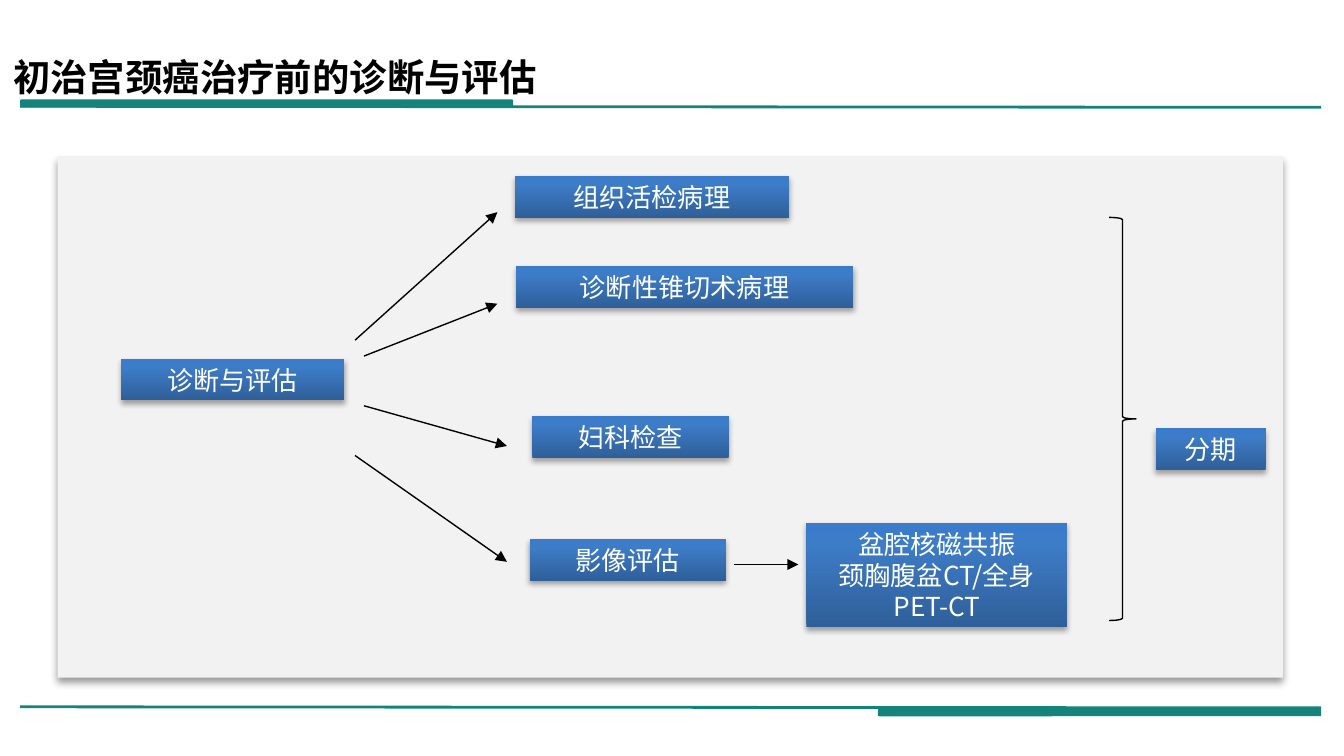
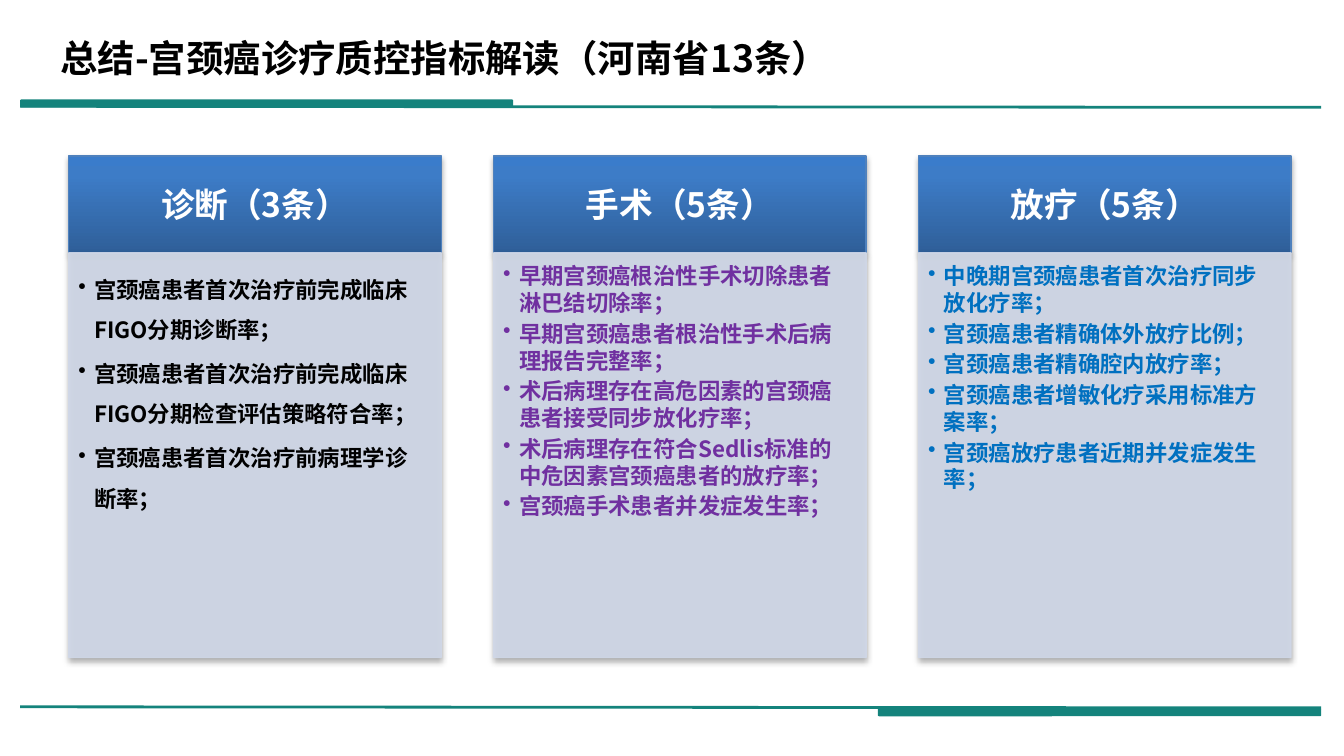
"""Build two slides on the diagnosis and quality control of cervical cancer."""
from copy import deepcopy
from lxml.etree import SubElement
from pptx import Presentation
from pptx.dml.color import RGBColor
from pptx.enum.shapes import MSO_CONNECTOR, MSO_SHAPE
from pptx.enum.text import MSO_ANCHOR, PP_ALIGN
from pptx.oxml.ns import qn
from pptx.util import Cm, Pt

FONT = "Noto Sans CJK SC"
BLACK = RGBColor(0x00, 0x00, 0x00)
WHITE = RGBColor(0xFF, 0xFF, 0xFF)
TEAL = RGBColor(0x14, 0x83, 0x7C)
GREY = RGBColor(0xF2, 0xF2, 0xF2)
PALE = RGBColor(0xD0, 0xD8, 0xE8)
EDGE = RGBColor(0x4F, 0x81, 0xBD)
PURPLE = RGBColor(0x70, 0x30, 0xA0)
BLUE = RGBColor(0x00, 0x70, 0xC0)
GRADE = [
    (0, RGBColor(0x2F, 0x5F, 0x99)),
    (0.8, RGBColor(0x3D, 0x7C, 0xC7)),
    (1, RGBColor(0x3A, 0x7C, 0xCB)),
]
SOFT = (3.1, 1.8, 35)
DEEP = (4, 3, 40)


def draw(slide, kind, at, fill=None, shade=None, edge=None):
    """Add a preset shape with its fill, edge and shadow."""
    shape = slide.shapes.add_shape(kind, *map(Cm, at))
    shape.shadow.inherit = False
    props = shape._element.spPr
    if fill is None:
        shape.fill.background()
    elif fill is GRADE:
        shape.fill.gradient()
        shape.fill.gradient_angle = 90
        stops = props.find(qn("a:gradFill")).find(qn("a:gsLst"))
        stops.append(deepcopy(stops[0]))
        for stop, (place, tone) in zip(shape.fill.gradient_stops, GRADE):
            stop.position = place
            stop.color.rgb = tone
    else:
        shape.fill.solid()
        shape.fill.fore_color.rgb = fill
    if edge is None:
        shape.line.fill.background()
    else:
        shape.line.color.rgb = edge
        shape.line.width = Pt(0.75)
    if shade:
        blur, drop, dark = shade
        glow = SubElement(
            props.find(qn("a:effectLst")), qn("a:outerShdw"),
            blurRad=str(Pt(blur)), dist=str(Pt(drop)), dir="5400000", rotWithShape="0")
        tone = SubElement(glow, qn("a:srgbClr"), val="000000")
        SubElement(tone, qn("a:alpha"), val=str(dark * 1000))
    return shape


def write(shape, text, size, tone, bold=False, align=PP_ALIGN.CENTER, pad=(0.18, 0.1, 0.18, 0.1)):
    """Fill a shape with formatted text."""
    frame = shape.text_frame
    frame.text = text
    frame.word_wrap = True
    frame.vertical_anchor = MSO_ANCHOR.MIDDLE
    frame.margin_left, frame.margin_top, frame.margin_right, frame.margin_bottom = map(Cm, pad)
    for para in frame.paragraphs:
        para.alignment = align
        for run in para.runs:
            run.font.size = Pt(size)
            run.font.bold = bold
            run.font.color.rgb = tone
            run.font.name = FONT
            SubElement(run._r.get_or_add_rPr(), qn("a:ea"), typeface=FONT)
    return frame


deck = Presentation()
deck.slide_width, deck.slide_height = Cm(25.4), Cm(14.29)
lines = []
slides = []

titles = [
    ("初治宫颈癌治疗前的诊断与评估", (0, 0.48, 15.14, 1.93)),
    ("总结-宫颈癌诊疗质控指标解读（河南省13条）", (0.89, 0.53, 16.21, 1.12)),
]
for title, at in titles:
    slide = deck.slides.add_slide(deck.slide_layouts[6])
    slides.append(slide)
    for band in [(0.38, 1.88, 9.32, 0.15), (16.59, 13.39, 8.38, 0.15)]:
        draw(slide, MSO_SHAPE.ROUNDED_RECTANGLE, band, TEAL)
    for top in (2.01, 13.36):
        lines.append((slide, (0.38, top, 24.97, top + 0.02), TEAL, 1.5))
    head = slide.shapes.add_textbox(*map(Cm, at))
    write(head, title, 20, BLACK, True, PP_ALIGN.LEFT, (0.25, 0.13, 0.25, 0.13))

flow, review = slides

draw(flow, MSO_SHAPE.RECTANGLE, (1.09, 2.95, 23.16, 9.86), GREY, DEEP)
nodes = [
    ("诊断与评估", 2.29, 6.78, 4.22, 0.79),
    ("组织活检病理", 9.73, 3.33, 5.18, 0.79),
    ("诊断性锥切术病理", 9.75, 5.03, 6.38, 0.79),
    ("妇科检查", 10.06, 7.87, 3.71, 0.79),
    ("影像评估", 10.01, 10.19, 3.71, 0.79),
    ("盆腔核磁共振\n颈胸腹盆CT/全身PET-CT", 15.24, 9.88, 4.93, 1.98),
    ("分期", 21.84, 8.1, 2.08, 0.79),
]
for text, *at in nodes:
    write(draw(flow, MSO_SHAPE.RECTANGLE, at, GRADE, SOFT), text, 14, WHITE)
draw(flow, MSO_SHAPE.RIGHT_BRACE, (20.96, 4.11, 0.51, 7.62), edge=BLACK)

arrows = [
    (6.71, 6.43, 9.4, 4.01),
    (6.88, 6.73, 9.4, 5.74),
    (6.88, 7.67, 9.58, 8.43),
    (6.71, 8.61, 9.58, 10.62),
    (13.87, 10.67, 15.09, 10.67),
]
for ends in arrows:
    lines.append((flow, ends, BLACK, 0.75))

groups = [
    ("诊断（3条）", BLACK, 1.5, [
        "宫颈癌患者首次治疗前完成临床FIGO分期诊断率；",
        "宫颈癌患者首次治疗前完成临床FIGO分期检查评估策略符合率；",
        "宫颈癌患者首次治疗前病理学诊断率；",
    ]),
    ("手术（5条）", PURPLE, 1.0, [
        "早期宫颈癌根治性手术切除患者淋巴结切除率；",
        "早期宫颈癌患者根治性手术后病理报告完整率；",
        "术后病理存在高危因素的宫颈癌患者接受同步放化疗率；",
        "术后病理存在符合Sedlis标准的中危因素宫颈癌患者的放疗率；",
        "宫颈癌手术患者并发症发生率；",
    ]),
    ("放疗（5条）", BLUE, 1.0, [
        "中晚期宫颈癌患者首次治疗同步放化疗率；",
        "宫颈癌患者精确体外放疗比例；",
        "宫颈癌患者精确腔内放疗率；",
        "宫颈癌患者增敏化疗采用标准方案率；",
        "宫颈癌放疗患者近期并发症发生率；",
    ]),
]
for col, (name, tone, space, items) in enumerate(groups):
    left = 1.3 + col * 8.03
    head = draw(review, MSO_SHAPE.RECTANGLE, (left, 2.95, 7.04, 1.83), GRADE, SOFT, EDGE)
    write(head, name, 18, WHITE, True, pad=(0.36, 0.2, 0.36, 0.2))
    body = draw(review, MSO_SHAPE.RECTANGLE, (left, 4.78, 7.04, 7.65), PALE, SOFT, PALE)
    for fill in body._element.spPr.iter(qn("a:solidFill")):
        SubElement(fill[0], qn("a:alpha"), val="90000")
    frame = write(body, "\n".join(items), 12, tone, True, PP_ALIGN.LEFT, (0.18, 0.18, 0.23, 0.25))
    frame.vertical_anchor = MSO_ANCHOR.TOP
    for para in frame.paragraphs:
        props = para._p.get_or_add_pPr()
        props.set("marL", str(Cm(0.3)))
        props.set("indent", str(Cm(-0.3)))
        SubElement(props, qn("a:buChar"), char="•")
        para.line_spacing = space
        para.space_after = Pt(2)

for slide, ends, tone, width in lines:
    line = slide.shapes.add_connector(MSO_CONNECTOR.STRAIGHT, *map(Cm, ends))
    line.line.color.rgb = tone
    line.line.width = Pt(width)
    if tone == BLACK:
        SubElement(line.line._get_or_add_ln(), qn("a:tailEnd"), type="triangle")
    SubElement(line._element.spPr, qn("a:effectLst"))

deck.save("out.pptx")
